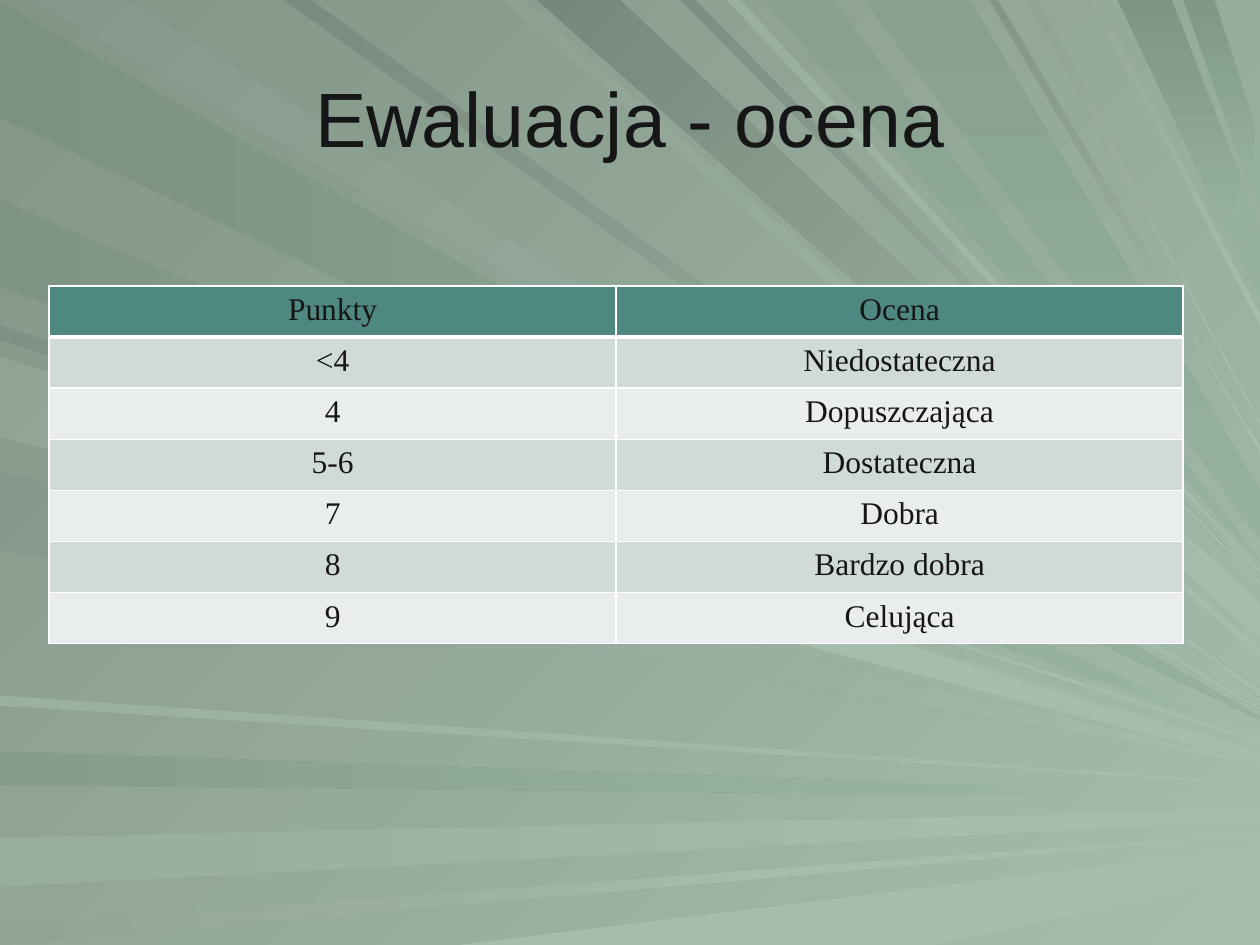
from dataclasses import dataclass

from lxml.etree import SubElement
from pptx import Presentation
from pptx.dml.color import RGBColor as RGB
from pptx.enum.text import MSO_ANCHOR as Anchor, PP_ALIGN as Align
from pptx.oxml.ns import qn
from pptx.util import Inches, Pt

WIDTH, HEIGHT = 10, 7.5


@dataclass(frozen=True)
class Theme:
    ink: str = "161616"
    header: str = "4E8880"
    bands: tuple = ("D0DAD8", "E9EDED")
    border: str = "FFFFFF"
    dusk: str = "829587"
    mist: str = "A5BDAC"
    sage: str = "96B29E"
    title_font: str = "Arial"
    title_size: int = 44
    table_font: str = "Times New Roman"
    table_size: int = 18


THEME = Theme()
MIST, SAGE = THEME.mist, THEME.sage


@dataclass(frozen=True)
class Ray:
    """A beam from a stretch of one slide edge to a tip on the right edge."""
    side: str
    begin: float
    end: float
    tip: float
    shade: str
    glow: str = MIST
    joint: float = 1  # share of the length after which the bright part starts
    tip_width: float = 0.02


# Back to front
RAYS = [
    Ray("left", 0.02, 0.93, 5.7, "7B9282", SAGE),
    Ray("top", 0.26, 1.01, 5.63, "85988B"),
    Ray("left", 5.96, 6.23, 6.32, "859E8C", SAGE, 0.7),
    Ray("left", 6.65, 7.04, 6.47, "97AD9E", joint=0.83, tip_width=0.08),
    Ray("left", 7.35, 7.5, 6.62, "90A496", joint=0.63),
    Ray("bottom", 3.64, 7.42, 6.83, MIST, tip_width=0.22),
    Ray("left", 2.58, 2.7, 5.89, "7F9184", joint=0.87),
    Ray("left", 1.59, 2.28, 5.85, "7E9584", SAGE, 0.87),
    Ray("top", 3.98, 4.16, 5.18, "8DA293", joint=0.91, tip_width=0.06),
    Ray("top", 4.26, 4.92, 4.93, "76877B", joint=0.92, tip_width=0.28),
    Ray("top", 5.4, 5.52, 4.63, "7C8D81", joint=0.95),
    Ray("top", 6.06, 6.61, 4.46, "87A18E", SAGE, 0.97),
    Ray("top", 8.87, 9.3, 2.1, "7E9584", SAGE, 0.78, 0.54),
    Ray("top", 9.39, 9.64, 1.4, "809887", SAGE, 0.9, 0.53),
    Ray("left", 2.78, 3.42, 5.99, "879B8D", tip_width=0.06),
    Ray("left", 3.74, 4.37, 6.06, "85988B"),
    Ray("left", 5.52, 5.6, 6.22, "9AB0A0"),
    Ray("top", 2.25, 2.47, 5.5, "798A7E", tip_width=0.05),
    Ray("top", 5.77, 5.88, 4.54, "9AB0A0"),
    Ray("top", 6.86, 7.7, 4.09, "87A18E", SAGE, tip_width=0.38),
    Ray("top", 7.85, 7.92, 3.57, THEME.dusk, tip_width=0.06),
    Ray("top", 8.15, 8.24, 3.36, "90A496"),
    Ray("top", 8.65, 8.72, 2.54, "95AA9B", tip_width=0.09),
    Ray("left", 2.83, 3.47, 6.03, "90A496", joint=0.63, tip_width=0.05),
]

GRADES = [
    ("Punkty", "Ocena"),
    ("<4", "Niedostateczna"),
    ("4", "Dopuszczająca"),
    ("5-6", "Dostateczna"),
    ("7", "Dobra"),
    ("8", "Bardzo dobra"),
    ("9", "Celująca"),
]


def paint(fill, start, end, angle=0):
    """Plain fill for equal colours, else a gradient between them."""
    if start == end:
        fill.solid()
        fill.fore_color.rgb = RGB.from_string(start)
        return
    fill.gradient()
    fill.gradient_angle = -angle % 360  # python-pptx counts counter-clockwise
    for stop, color in zip(fill.gradient_stops, (start, end)):
        stop.color.rgb = RGB.from_string(color)


def add_beam(slide, corners, start, end, angle):
    first, *rest = [(Inches(x), Inches(y)) for x, y in corners]
    outline = slide.shapes.build_freeform(*first, scale=1.0)
    outline.add_line_segments(rest, close=True)
    beam = outline.convert_to_shape()
    beam.shadow.inherit = False
    beam.line.fill.background()
    paint(beam.fill, start, end, angle)


def along(start, end, share):
    return tuple(a + (b - a) * share for a, b in zip(start, end))


def add_ray(slide, ray):
    on_edge = {
        "left": lambda place: (0, place),
        "top": lambda place: (place, 0),
        "bottom": lambda place: (place, HEIGHT),
    }[ray.side]
    root_a, root_b = on_edge(ray.begin), on_edge(ray.end)
    half = ray.tip_width / 2 * (-1 if ray.side == "top" else 1)
    tip_a, tip_b = (WIDTH, ray.tip - half), (WIDTH, ray.tip + half)
    joint_a, joint_b = along(root_a, tip_a, ray.joint), along(root_b, tip_b, ray.joint)

    # Green rays fade along their edge's direction, pale ones diagonally unless flat
    if ray.glow == SAGE:
        angle = 90 if ray.side == "top" else 0
    else:
        angle = 0 if ray.side == "left" and ray.begin > 5 else 45
    add_beam(slide, [root_a, joint_a, joint_b, root_b], ray.shade, ray.glow, angle)
    if ray.joint < 1:
        end = MIST if ray.side == "left" else ray.glow
        add_beam(slide, [joint_a, tip_a, tip_b, joint_b], ray.glow, end, 0)


def write_centered(frame, text, font_name, size):
    line = frame.paragraphs[0]
    line.text = text
    line.alignment = Align.CENTER
    format_values = {"name": font_name, "size": Pt(size), "bold": False}
    for attribute, value in format_values.items():
        setattr(line.font, attribute, value)
    line.font.color.rgb = RGB.from_string(THEME.ink)


def add_title(slide, text):
    title = slide.shapes.add_textbox(Inches(0.5), Inches(0.3), Inches(9), Inches(1.25))
    title.text_frame.word_wrap = True
    title.text_frame.vertical_anchor = Anchor.MIDDLE
    write_centered(title.text_frame, text, THEME.title_font, THEME.title_size)


def set_borders(cell, widths):
    properties = cell._tc.get_or_add_tcPr()
    for position, (side, width) in enumerate(widths.items()):
        edge = properties.makeelement(qn(f"a:{side}"), {"w": str(Pt(width))})
        color = SubElement(SubElement(edge, qn("a:solidFill")), qn("a:srgbClr"))
        color.set("val", THEME.border)
        properties.insert(position, edge)  # borders come before the fill


def add_grade_table(slide, rows):
    grades = slide.shapes.add_table(
        len(rows), len(rows[0]), Inches(0.39), Inches(2.27), Inches(9), Inches(2.84)
    ).table
    grades.first_row = grades.horz_banding = False
    for r, row in enumerate(rows):
        color = THEME.bands[(r - 1) % 2] if r else THEME.header
        # A thick rule divides the header from the grades
        widths = {"lnL": 1, "lnR": 1, "lnT": 3 if r == 1 else 1, "lnB": 1 if r else 3}
        for c, text in enumerate(row):
            cell = grades.cell(r, c)
            write_centered(cell.text_frame, text, THEME.table_font, THEME.table_size)
            paint(cell.fill, color, color)
            set_borders(cell, widths)


def main():
    deck = Presentation()
    deck.slide_width, deck.slide_height = Inches(WIDTH), Inches(HEIGHT)
    slide = deck.slides.add_slide(deck.slide_layouts[6])

    # Background
    paint(slide.background.fill, THEME.dusk, THEME.mist, 45)
    for ray in RAYS:
        add_ray(slide, ray)

    # Content
    add_title(slide, "Ewaluacja - ocena")
    add_grade_table(slide, GRADES)

    deck.save("out.pptx")


if __name__ == "__main__":
    main()
